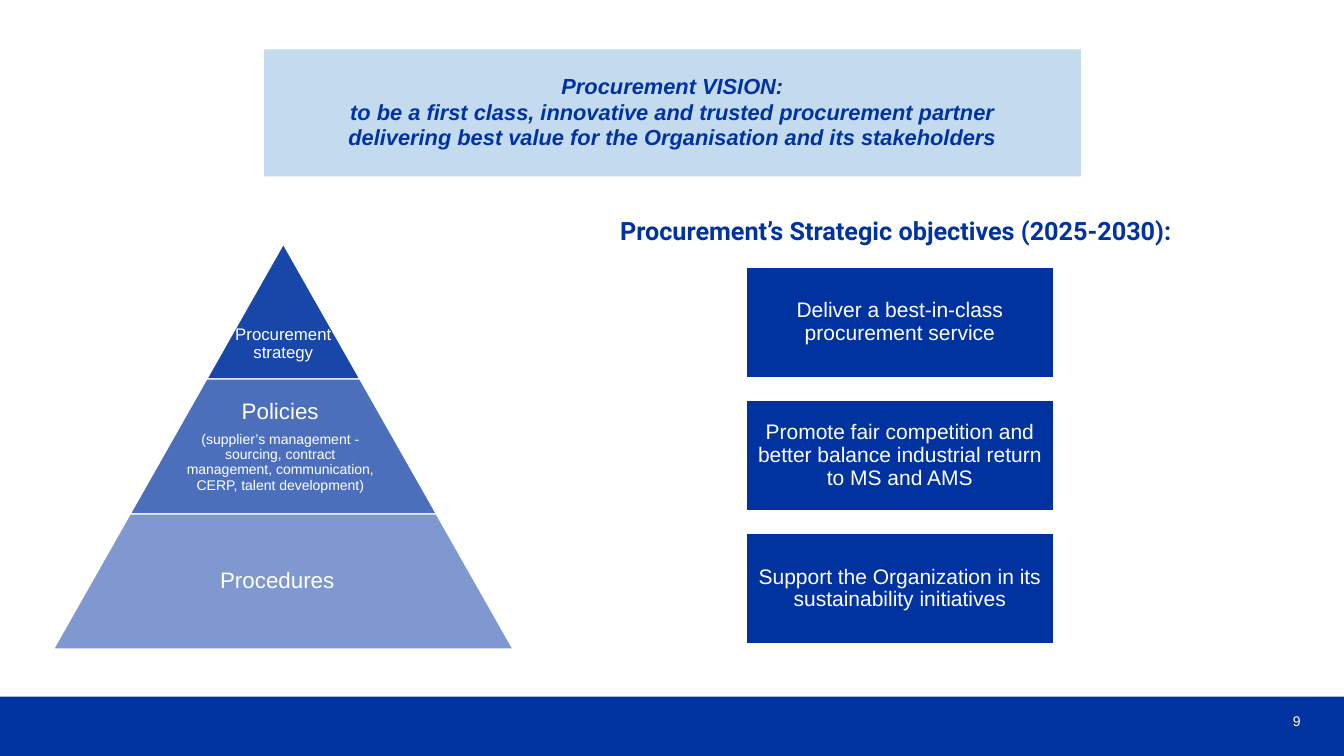
from lxml import etree
from pptx import Presentation
from pptx import util as u
from pptx.dml.color import RGBColor
from pptx.enum import shapes, text
from pptx.oxml.ns import qn

COLOURS = {"navy": "0033A0", "pale": "C4DAEF", "white": "FFFFFF"}
CENTRE, RIGHT, LEFT = text.PP_ALIGN.CENTER, text.PP_ALIGN.RIGHT, text.PP_ALIGN.LEFT
TOP, MIDDLE = text.MSO_ANCHOR.TOP, text.MSO_ANCHOR.MIDDLE


class SlideBuilder:
    """Holds the slide and the shared style."""

    def __init__(self, slide, font="Arial"):
        self.slide = slide
        self.font = font

    def colour(self, name):
        return RGBColor.from_string(COLOURS[name])

    def place(self, item, box):
        item.left, item.top, item.width, item.height = map(u.Inches, box)

    def set_text(self, item, lines, align=CENTRE, anchor=MIDDLE, inset=0.0, top=None,
                 colour="white", spacing=0.9, gap=0, font=None, bold=False, italic=False):
        """Fill a shape with (wording, size) lines."""
        frame = item.text_frame
        frame.word_wrap = True
        frame.auto_size = text.MSO_AUTO_SIZE.NONE
        frame.vertical_anchor = anchor
        frame.margin_left = frame.margin_right = frame.margin_bottom = u.Inches(inset)
        frame.margin_top = u.Inches(inset if top is None else top)
        frame.text = "\n".join(wording for wording, _ in lines)
        for index, (paragraph, (_, size)) in enumerate(zip(frame.paragraphs, lines)):
            paragraph.alignment = align
            paragraph.line_spacing = spacing
            paragraph.space_before = u.Pt(gap if index else 0)
            style = paragraph.font
            style.name, style.size = font or self.font, u.Pt(size)
            style.bold, style.italic = bold, italic
            style.color.rgb = self.colour(colour)

    def title(self, box, fill, lines, **style):
        heading = self.slide.shapes.title
        self.place(heading, box)
        heading.fill.solid()
        heading.fill.fore_color.rgb = self.colour(fill)
        self.set_text(heading, lines, **style)

    def label(self, box, lines, **style):
        self.set_text(self.slide.shapes.add_textbox(*map(u.Inches, box)), lines, **style)

    def shape(self, kind, box, fill, outline=None, opacity=100):
        item = self.slide.shapes.add_shape(kind, *map(u.Inches, box))
        item.shadow.inherit = False
        item.fill.solid()
        item.fill.fore_color.rgb = self.colour(fill)
        if opacity < 100:
            value = item.element.spPr.find(qn("a:solidFill"))[0]
            etree.SubElement(value, qn("a:alpha"), val=str(opacity * 1000))
        if outline:
            item.line.color.rgb = self.colour(outline)
            item.line.width = u.Pt(1)
        else:
            item.line.fill.background()
        return item


def main():
    deck = Presentation()
    deck.slide_width, deck.slide_height = u.Inches(13.33), u.Inches(7.5)
    page = SlideBuilder(deck.slides.add_slide(deck.slide_layouts[5]))

    # Footer band and page number
    page.shape(shapes.MSO_SHAPE.RECTANGLE, (0, 6.91, 13.33, 0.59), "navy")
    page.label((12.15, 6.95, 0.75, 0.4), [("9", 10)], align=RIGHT, spacing=1.0)

    # Vision statement
    vision = ["Procurement VISION:",
              "to be a first class, innovative and trusted procurement partner",
              "delivering best value for the Organisation and its stakeholders"]
    page.title((2.62, 0.49, 8.1, 1.26), "pale", [(line, 15.6) for line in vision],
               anchor=TOP, top=0.25, colour="navy", spacing=0.95, gap=0.6,
               bold=True, italic=True)

    # Pyramid: each tier is one step wider than the one above
    tiers = [
        # opacity, text centre, text width, top inset, lines
        (90, 2.81, 1.54, 0.66, [("Procurement strategy", 12)]),
        (70, 2.78, 1.97, 0.02, [
            ("Policies", 16),
            ("(supplier’s management - sourcing, contract management, "
             "communication, CERP, talent development)", 10)]),
        (50, 2.75, 2.96, 0.02, [("Procedures", 16)]),
    ]
    apex, pyramid_top, step, tier_height = 2.81, 2.42, 1.52, 1.34
    for level, (opacity, centre, width, inset_top, lines) in enumerate(tiers):
        top, tier_width = pyramid_top + level * tier_height, step * (level + 1)
        tier = page.shape(shapes.MSO_SHAPE.TRAPEZOID,
                          (apex - tier_width / 2, top, tier_width, tier_height),
                          "navy", "white", opacity)
        tier.adjustments[0] = step / 2 / tier_height
        page.label((centre - width / 2, top, width, tier_height), lines,
                   inset=0.02, top=inset_top, gap=6)

    # Strategic objectives
    page.label((6.15, 2.17, 5.7, 0.42),
               [("Procurement’s Strategic objectives (2025-2030):", 18)],
               align=LEFT, anchor=TOP, colour="navy", font="Roboto", bold=True)
    objectives = [
        "Deliver a best-in-class procurement service",
        "Promote fair competition and better balance industrial return to MS and AMS",
        "Support the Organization in its sustainability initiatives",
    ]
    card_height, card_gap = 1.1, 0.22
    for row, objective in enumerate(objectives):
        card = page.shape(shapes.MSO_SHAPE.RECTANGLE,
                          (7.4, 2.65 + row * (card_height + card_gap), 3.05, card_height),
                          "navy", "white")
        page.set_text(card, [(objective, 15)], inset=0.06)

    deck.save("out.pptx")


if __name__ == "__main__":
    main()
